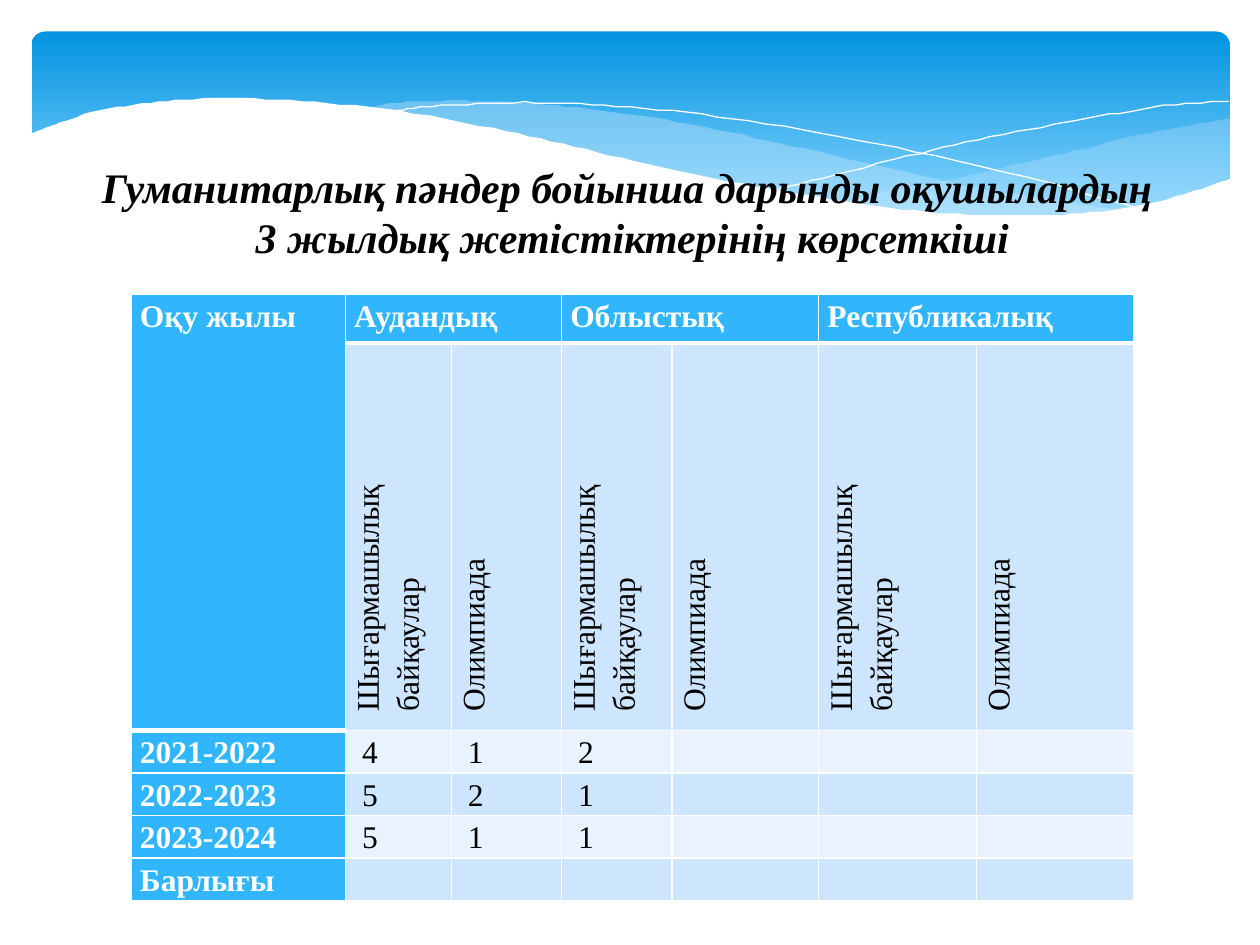
from lxml import etree
from pptx import Presentation
from pptx.dml.color import RGBColor
from pptx.enum.shapes import MSO_SHAPE
from pptx.enum.text import MSO_AUTO_SIZE, PP_ALIGN
from pptx.oxml.ns import qn
from pptx.util import Pt

ROUNDED = MSO_SHAPE.ROUNDED_RECTANGLE
CENTER = PP_ALIGN.CENTER
FIT_SHAPE = MSO_AUTO_SIZE.SHAPE_TO_FIT_TEXT
FONT = "Times New Roman"
COLORS = {
    "white": "FFFFFF", "black": "000000", "sky_top": "0293E0", "sky_bottom": "83D3FE",
    "mist": "C6E7FC", "header": "31B6FD", "band_dark": "CEE5FE", "band_light": "E8F3FF",
}


def smooth_curve(knots, steps=6):
    """Return points of a Catmull-Rom curve through the knots."""
    padded = [knots[0], *knots, knots[-1]]
    points = [knots[0]]
    for a, b, c, d in zip(padded, padded[1:], padded[2:], padded[3:]):
        for step in range(1, steps + 1):
            t = step / steps
            points.append(tuple(
                (2 * q + (r - p) * t + (2 * p - 5 * q + 4 * r - s) * t ** 2
                 + (3 * q - p - 3 * r + s) * t ** 3) / 2
                for p, q, r, s in zip(a, b, c, d)))
    return points


class SlideBuilder:
    """Draws styled elements on the current slide."""

    def __init__(self, slide):
        self.slide = slide

    def rgb(self, name):
        return RGBColor.from_string(COLORS[name])

    def style_runs(self, paragraph, size, color, bold=False, italic=False):
        for run in paragraph.runs:
            font = run.font
            font.name, font.size, font.bold, font.italic = FONT, Pt(size), bold, italic
            font.color.rgb = self.rgb(color)

    def banner(self, left, top, width, height):
        banner = self.slide.shapes.add_shape(ROUNDED, Pt(left), Pt(top), Pt(width), Pt(height))
        banner.adjustments[0] = 0.07
        banner.shadow.inherit = False
        banner.line.fill.background()
        banner.fill.gradient()
        banner.fill.gradient_angle = 270
        stops = zip(banner.fill.gradient_stops, ("sky_top", "sky_bottom"), (0, 0.9))
        for stop, color, position in stops:
            stop.color.rgb = self.rgb(color)
            stop.position = position

    def outline(self, points, closed):
        start, *rest = points
        builder = self.slide.shapes.build_freeform(*start, scale=Pt(1))
        builder.add_line_segments(rest, close=closed)
        outline = builder.convert_to_shape()
        outline.shadow.inherit = False
        return outline

    def wave(self, points, color, opacity=100):
        wave = self.outline(points, True)
        wave.line.fill.background()
        wave.fill.solid()
        wave.fill.fore_color.rgb = self.rgb(color)
        if opacity < 100:
            tint = wave.fill._xPr.find(".//" + qn("a:srgbClr"))
            etree.SubElement(tint, qn("a:alpha"), val=str(opacity * 1000))

    def ripple(self, points):
        ripple = self.outline(points, False)
        ripple.fill.background()
        ripple.line.color.rgb = self.rgb("white")
        ripple.line.width = Pt(0)

    def title(self, lines, left, top, width, height):
        box = self.slide.shapes.add_textbox(Pt(left), Pt(top), Pt(width), Pt(height))
        frame = box.text_frame
        frame.word_wrap = False
        frame.auto_size = FIT_SHAPE
        frame.text = "\n".join(lines)
        for paragraph in frame.paragraphs:
            paragraph.alignment = CENTER
            self.style_runs(paragraph, 24, "black", True, True)

    def borders(self, cell, widths):
        properties = cell._tc.get_or_add_tcPr()
        for side, width in zip("LRTB", widths):
            edge = etree.SubElement(properties, qn(f"a:ln{side}"), w=str(Pt(width)))
            fill = etree.SubElement(edge, qn("a:solidFill"))
            etree.SubElement(fill, qn("a:srgbClr"), val=COLORS["white"])

    def cell(self, cell, text, fill, is_header, indent, edges, vertical):
        self.borders(cell, edges)
        cell.fill.solid()
        cell.fill.fore_color.rgb = self.rgb(fill)
        cell.margin_left = cell.margin_right = Pt(5)
        cell.margin_top = cell.margin_bottom = 0
        if vertical:
            cell._tc.tcPr.set("vert", "vert270")
        cell.text_frame.text = text
        paragraph = cell.text_frame.paragraphs[0]
        paragraph.line_spacing = 1.15
        paragraph._p.get_or_add_pPr().set("marL", str(Pt(indent)))
        self.style_runs(paragraph, 18, "white" if is_header else "black", is_header)

    def table(self, rows, left, top, widths, heights):
        frame = self.slide.shapes.add_table(
            len(rows), len(widths), Pt(left), Pt(top), Pt(sum(widths)), Pt(sum(heights)))
        table = frame.table
        table.first_row = table.horz_banding = False
        for column, width in zip(table.columns, widths):
            column.width = Pt(width)
        for row, height in zip(table.rows, heights):
            row.height = Pt(height)
        for r, texts in enumerate(rows):
            for c, text in enumerate(texts):
                is_header = r == 0 or c == 0
                band = "band_dark" if r % 2 else "band_light"
                under_header = r == 1 if c else r == 2
                above_body = r == 0 if c else r < 2
                edges = (1, 1, 3 if under_header else 1, 3 if above_body else 1)
                indent = 0 if is_header else 5.8 if r == 1 else 4.5
                self.cell(table.cell(r, c), text, "header" if is_header else band,
                          is_header, indent, edges, r == 1 and c > 0)
        table.cell(0, 0).merge(table.cell(1, 0))
        for c in range(1, len(widths), 2):
            table.cell(0, c).merge(table.cell(0, c + 1))


def main():
    deck = Presentation()
    deck.slide_width, deck.slide_height = Pt(720), Pt(540)
    builder = SlideBuilder(deck.slides.add_slide(deck.slide_layouts[6]))

    builder.banner(18, 18, 684.7, 112.3)
    right_crest = [(703, 67.7), (673.2, 72.7), (641.5, 79.2), (620, 85), (579.6, 94.3),
                   (542.2, 103), (508.3, 109.4), (476, 115.2)]
    right_trough = [(476, 115.2), (507.6, 118.8), (536.4, 121.7), (562.3, 123.8),
                    (593.3, 123.8), (621.4, 122.4), (645.8, 118.8), (668.2, 113.8),
                    (683.3, 109.4), (703, 101.5)]
    builder.wave(smooth_curve(right_crest) + smooth_curve(right_trough), "mist", 29)
    middle_crest = [(643, 120.2), (602.6, 114.5), (558, 107.3), (508.3, 96.5), (452.9, 83.5),
                    (420.5, 76.3), (380.2, 68.4), (334.8, 61.9), (302.4, 59), (273.6, 57.6),
                    (247.7, 57.6), (225.4, 59), (205.9, 61.9)]
    middle_trough = [(205.9, 61.9), (246.2, 67.7), (290.9, 76.3), (323.3, 83.5),
                     (381.6, 97.2), (432.7, 108), (478.8, 115.9), (519.8, 121),
                     (556.6, 123.8), (589, 124.6), (617, 123.1), (643, 120.2)]
    builder.wave(smooth_curve(middle_crest) + smooth_curve(middle_trough), "mist", 40)
    falling_ripple = [(222.5, 64.8), (236.2, 61.9), (261.4, 59.8), (299.5, 58.5),
                      (337.7, 59.8), (383.8, 63.4), (437.8, 70.6), (500.4, 82.1),
                      (572.4, 97.9), (653, 119.5)]
    rising_ripple = [(441.4, 108.7), (470.2, 101.5), (518.4, 89.3), (558.7, 79.9),
                     (601.9, 71.3), (634.3, 65.5), (665.3, 60.5), (702, 57.6)]
    for ripple in (falling_ripple, rising_ripple):
        builder.ripple(smooth_curve(ripple))
    front_crest = [(703.4, 101.5), (676.8, 110.9), (647.3, 118.1), (612, 122.4),
                   (582.5, 123.1), (547.9, 122.4), (509.8, 118.8), (466.6, 112.3),
                   (416.9, 103.7), (362.2, 92.2), (321.8, 82.1), (281.5, 73.4),
                   (227.5, 63.4), (180, 58.3), (139, 56.2), (105, 56.9), (76.3, 59.8),
                   (48.2, 65.5), (28.8, 72), (16.6, 77)]
    builder.wave(smooth_curve(front_crest) + [(16.6, 161.3), (703.4, 161.3)], "white")

    contests = ["Шығармашылық байқаулар", "Олимпиада"]
    achievements = [
        ["Оқу жылы", "Аудандық", "", "Облыстық", "", "Республикалық", ""],
        ["", *contests * 3],
        ["2021-2022", "4", "1", "2", "", "", ""],
        ["2022-2023", "5", "2", "1", "", "", ""],
        ["2023-2024", "5", "1", "1", "", "", ""],
        ["Барлығы", "", "", "", "", "", ""],
    ]
    builder.table(achievements, 75, 168, [122.4, 60.5, 63, 63, 84, 90, 90],
                  [28, 221.5] + [24.3] * 4)
    builder.title(["Гуманитарлық пәндер бойынша дарынды оқушылардың ",
                   "3 жылдық жетістіктерінің көрсеткіші"], 48.2, 88.6, 626.4, 65.5)
    deck.save("out.pptx")


if __name__ == "__main__":
    main()
